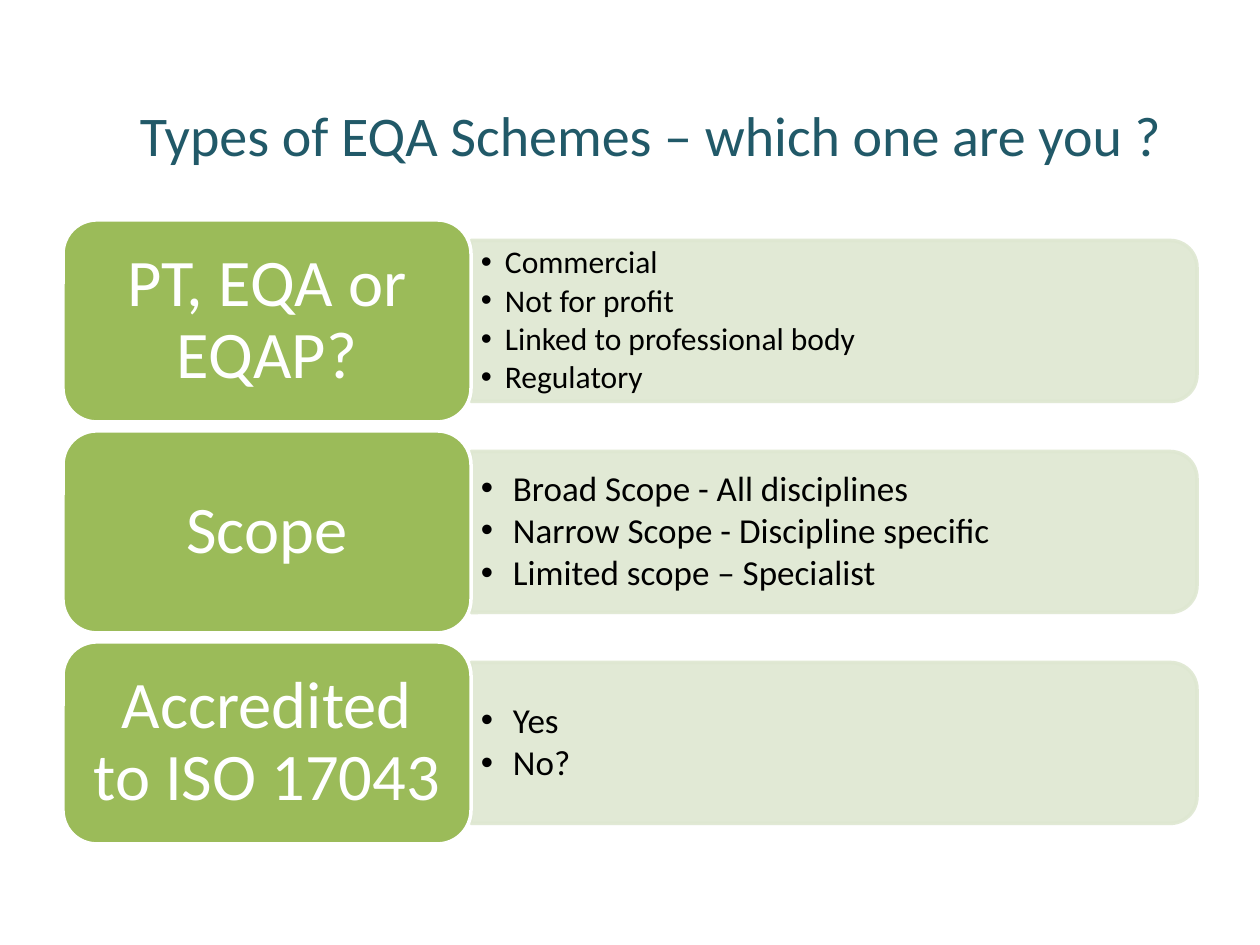
import pptx
import pptx.dml.color
import pptx.enum.shapes
import pptx.enum.text
import pptx.oxml.ns
import pptx.util
from lxml import etree

SCALE = 914400 / 126
SHAPES = pptx.enum.shapes.MSO_SHAPE
ALIGN = pptx.enum.text.PP_ALIGN
ROW_LEFT, ROW_TOP, ROW_WIDTH, ROW_HEIGHT, ROW_PITCH = 63, 220, 1134, 202, 211
LABEL_WIDTH = 408
BAR_HEIGHT = 161
ROWS = [
    ("PT, EQA or EQAP?", 18, 24,
     ["Commercial", "Not for profit", "Linked to professional body", "Regulatory"]),
    ("Scope", 20, 32,
     ["Broad Scope - All disciplines", "Narrow Scope - Discipline specific",
      "Limited scope – Specialist"]),
    ("Accredited to ISO 17043", 20, 32, ["Yes", "No?"]),
]


def px(value):
    return pptx.util.Emu(round(value * SCALE))


def color(hex_value):
    return pptx.dml.color.RGBColor.from_string(hex_value)


def apply(target, values):
    for name, value in values.items():
        setattr(target, name, value)


def add_panel(slide, kind, box, fill, line, opacity=None):
    shape = slide.shapes.add_shape(kind, *map(px, box))
    shape.shadow.inherit = False
    shape.fill.solid()
    shape.fill.fore_color.rgb = color(fill)
    shape.line.color.rgb = color(line)
    shape.line.width = pptx.util.Pt(2)
    if opacity:
        for element in shape.element.spPr.iter(pptx.oxml.ns.qn("a:srgbClr")):
            etree.SubElement(element, pptx.oxml.ns.qn("a:alpha"), val=str(opacity * 1000))
    return shape


def add_text(slide, box, lines, font, paragraph_format, insets):
    frame = slide.shapes.add_textbox(*map(px, box)).text_frame
    horizontal, vertical = map(px, insets)
    apply(frame, {
        "word_wrap": True,
        "vertical_anchor": pptx.enum.text.MSO_ANCHOR.MIDDLE,
        "margin_left": horizontal, "margin_right": horizontal,
        "margin_top": vertical, "margin_bottom": vertical,
    })
    frame.text = "\n".join(lines)
    size, hex_value = font
    for paragraph in frame.paragraphs:
        apply(paragraph, paragraph_format)
        apply(paragraph.runs[0].font, {"name": "Calibri", "size": pptx.util.Pt(size)})
        paragraph.runs[0].font.color.rgb = color(hex_value)
    return frame


def add_bullets(frame, indent):
    for paragraph in frame.paragraphs:
        properties = paragraph._p.get_or_add_pPr()
        properties.set("marL", str(px(indent)))
        properties.set("indent", str(-px(indent)))
        etree.SubElement(properties, pptx.oxml.ns.qn("a:buFont"), typeface="Arial")
        etree.SubElement(properties, pptx.oxml.ns.qn("a:buChar"), char="•")


def add_title(slide, box):
    add_text(slide, box, ["Types of EQA Schemes – which one are you ?"],
             (32, "215968"), {"alignment": ALIGN.CENTER}, (12, 6))


def add_row(slide, box, label, size, indent, bullets):
    left, top, width, height = box
    bar_left = left + LABEL_WIDTH
    bar_width = width - LABEL_WIDTH
    center_x, center_y = bar_left + bar_width / 2, top + height / 2
    bar = add_panel(slide, SHAPES.ROUND_2_SAME_RECTANGLE,
                    (center_x - BAR_HEIGHT / 2, center_y - bar_width / 2, BAR_HEIGHT, bar_width),
                    "DEE7D1", "DEE7D1", 90)
    bar.rotation = 90
    frame = add_text(slide, (bar_left, top + 28, bar_width - 8, height - 56), bullets,
                     (size, "000000"),
                     {"line_spacing": 0.9, "space_after": pptx.util.Pt(2.5)}, (10, 5))
    add_bullets(frame, indent)
    add_panel(slide, SHAPES.ROUNDED_RECTANGLE, (left, top, LABEL_WIDTH, height),
              "9BBB59", "FFFFFF")
    add_text(slide, (left + 10, top + 10, LABEL_WIDTH - 20, height - 20), [label],
             (38, "FFFFFF"), {"alignment": ALIGN.CENTER, "line_spacing": 0.9}, (20, 10))


def main():
    presentation = pptx.Presentation()
    apply(presentation, {"slide_width": px(1260), "slide_height": px(945)})
    slide = presentation.slides.add_slide(presentation.slide_layouts[6])
    add_title(slide, (84, 55, 1134, 158))
    for index, row in enumerate(ROWS):
        add_row(slide, (ROW_LEFT, ROW_TOP + index * ROW_PITCH, ROW_WIDTH, ROW_HEIGHT), *row)
    presentation.save("out.pptx")


if __name__ == "__main__":
    main()
